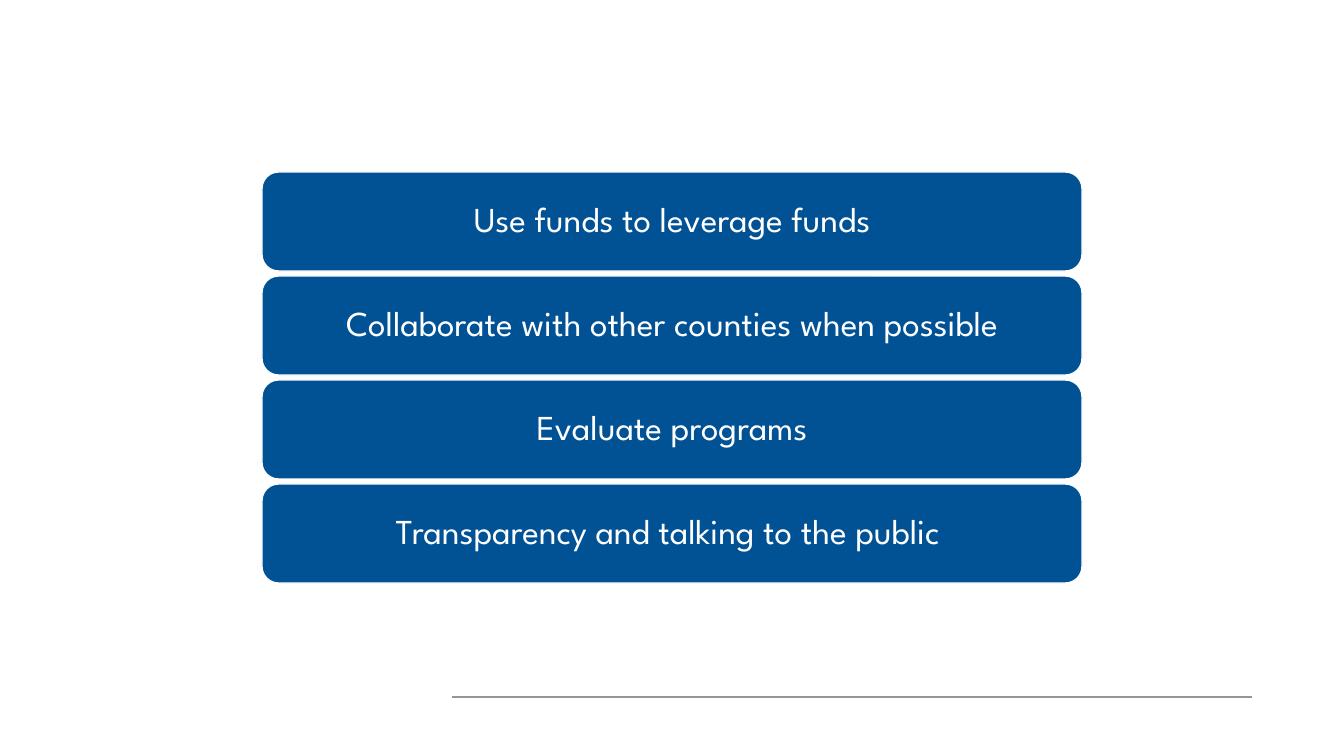
"""Build a slide with four stacked principle bars above a footer rule."""
from dataclasses import dataclass

from lxml.etree import SubElement
from pptx import Presentation
from pptx.dml.color import RGBColor
from pptx.enum.shapes import MSO_CONNECTOR, MSO_SHAPE
from pptx.enum.text import MSO_ANCHOR, PP_ALIGN
from pptx.oxml.ns import qn
from pptx.util import Emu, Pt

PRINCIPLES = [
    "Use funds to leverage funds",
    "Collaborate with other counties when possible",
    "Evaluate programs",
    "Transparency and talking to the public ",
]
SLIDE = (1344, 756)
BAR = {"left": 262, "top": 172, "width": 820, "height": 99, "pitch": 104}
INSET = {"side": 15, "end": 10}
RULE = {"left": 452, "right": 1252, "y": 697}


@dataclass(frozen=True)
class Theme:
    """Colours, font and sizes of the slide."""
    bar: RGBColor = RGBColor(0x00, 0x52, 0x95)
    white: RGBColor = RGBColor(0xFF, 0xFF, 0xFF)
    rule: RGBColor = RGBColor(0x92, 0x98, 0x97)
    font: str = "League Spartan"
    text: Pt = Pt(25)
    bar_line: Pt = Pt(1)
    rule_line: Pt = Pt(0.75)


THEME = Theme()


def px(n):
    """Turn pixels into EMU."""
    return Emu(round(n * 914400 / 100.8))


def add_rule(s):
    """Draw the footer rule."""
    y = px(RULE["y"])
    line = s.shapes.add_connector(
        MSO_CONNECTOR.STRAIGHT, px(RULE["left"]), y, px(RULE["right"]), y)
    line.line.color.rgb = THEME.rule
    line.line.width = THEME.rule_line
    SubElement(line._element.spPr, qn("a:effectLst"))


def add_bar(s, row, text):
    """Draw one principle bar with its centred text."""
    sp = s.shapes.add_shape(
        MSO_SHAPE.ROUNDED_RECTANGLE, px(BAR["left"]),
        px(BAR["top"] + row * BAR["pitch"]), px(BAR["width"]), px(BAR["height"]))
    sp.shadow.inherit = False
    sp.fill.solid()
    sp.fill.fore_color.rgb = THEME.bar
    sp.line.color.rgb = THEME.white
    sp.line.width = THEME.bar_line
    tf = sp.text_frame
    tf.text = text
    tf.word_wrap = True
    tf.vertical_anchor = MSO_ANCHOR.MIDDLE
    tf.margin_left = tf.margin_right = px(INSET["side"])
    tf.margin_top = tf.margin_bottom = px(INSET["end"])
    p = tf.paragraphs[0]
    p.alignment = PP_ALIGN.CENTER
    p.line_spacing = 0.9
    font = p.runs[0].font
    font.name = THEME.font
    font.size = THEME.text
    font.color.rgb = THEME.white


def main():
    """Assemble and save the slide."""
    prs = Presentation()
    prs.slide_width, prs.slide_height = map(px, SLIDE)
    s = prs.slides.add_slide(prs.slide_layouts.get_by_name("Blank"))
    add_rule(s)
    for row, text in enumerate(PRINCIPLES):
        add_bar(s, row, text)
    prs.save("out.pptx")


if __name__ == "__main__":
    main()
